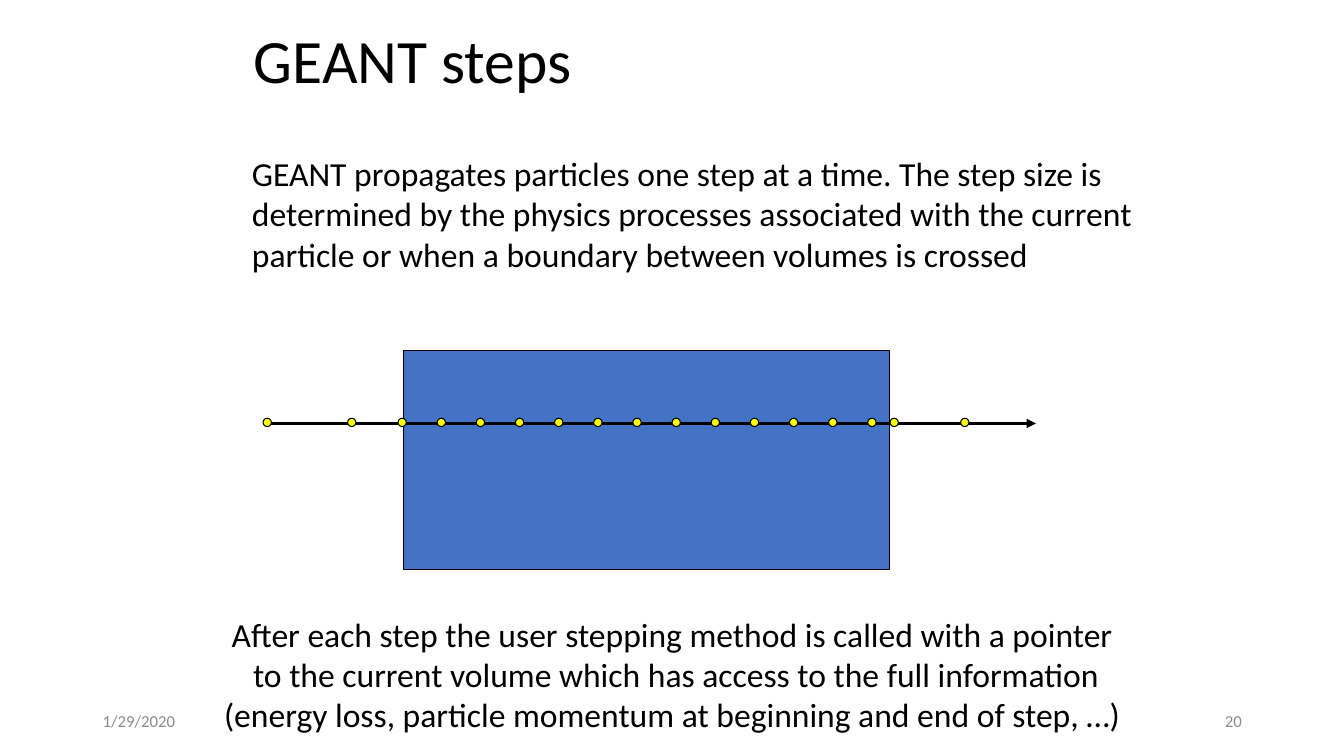
import pptx
import pptx.dml.color
import pptx.enum.shapes
import pptx.enum.text
import pptx.oxml
import pptx.util
from pptx.util import Cm

BLACK = pptx.dml.color.RGBColor(0x00, 0x00, 0x00)
GREY = pptx.dml.color.RGBColor(0x8C, 0x8C, 0x8C)
BLUE = pptx.dml.color.RGBColor(0x44, 0x72, 0xC4)
YELLOW = pptx.dml.color.RGBColor(0xFF, 0xFF, 0x00)

ALIGN = pptx.enum.text.PP_ALIGN
ANCHOR = pptx.enum.text.MSO_ANCHOR
SHAPE = pptx.enum.shapes.MSO_SHAPE

STEP_RULE = [
    "GEANT propagates particles one step at a time. The step size is",
    "determined by the physics processes associated with the current",
    "particle or when a boundary between volumes is crossed",
]
STEP_METHOD = [
    "After each step the user stepping method is called with a pointer",
    " to the current volume which has access to the full information",
    "(energy loss, particle momentum at beginning and end of step, …)",
]

TRACK_START, TRACK_END, TRACK_Y = 6.63, 26.11, 10.67
DOT_SIZE, DOT_TOP = 0.21, 10.54
FIRST_INSIDE, LAST_INSIDE, INSIDE_STEPS = 10.03, 21.87, 12


def set_values(target, values):
    for name, value in values.items():
        setattr(target, name, value)


def add_text(page, place, lines, size, color=BLACK, align=ALIGN.LEFT,
             anchor=ANCHOR.TOP, wrap=True, spacing=1.0):
    box = page.shapes.add_textbox(*map(Cm, place))
    frame = box.text_frame
    set_values(frame, {"word_wrap": wrap, "vertical_anchor": anchor})
    for index, line in enumerate(lines):
        para = frame.paragraphs[0] if index == 0 else frame.add_paragraph()
        set_values(para, {"alignment": align, "line_spacing": spacing})
        span = para.add_run()
        span.text = line
        set_values(span.font, {"name": "Calibri", "size": pptx.util.Pt(size)})
        span.font.color.rgb = color


def add_outlined(group, kind, place, fill):
    shape = group.shapes.add_shape(kind, *map(Cm, place))
    shape.shadow.inherit = False
    shape.fill.solid()
    shape.fill.fore_color.rgb = fill
    shape.line.color.rgb = BLACK
    shape.line.width = pptx.util.Pt(0.75)


def add_arrow(group, start, end):
    arrow = group.shapes.add_connector(
        pptx.enum.shapes.MSO_CONNECTOR.STRAIGHT, *map(Cm, start + end))
    arrow.line.color.rgb = BLACK
    arrow.line.width = pptx.util.Pt(2.25)
    line = arrow.line._get_or_add_ln()
    head = pptx.oxml.xmlchemy.OxmlElement("a:tailEnd")
    head.set("type", "triangle")
    line.append(head)
    line.addnext(pptx.oxml.xmlchemy.OxmlElement("a:effectLst"))


def add_track(page):
    group = page.shapes.add_group_shape()
    # Volume crossed by the particle
    add_outlined(group, SHAPE.RECTANGLE, (10.16, 8.84, 12.27, 5.51), BLUE)
    add_arrow(group, (TRACK_START, TRACK_Y), (TRACK_END, TRACK_Y))
    # Even steps inside the volume, longer ones outside
    gap = (LAST_INSIDE - FIRST_INSIDE) / INSIDE_STEPS
    inside = [FIRST_INSIDE + gap * step for step in range(INSIDE_STEPS + 1)]
    for left in [TRACK_START, 8.76, *inside, 22.43, 24.21]:
        add_outlined(group, SHAPE.OVAL,
                     (left, DOT_TOP, DOT_SIZE, DOT_SIZE), YELLOW)


def main():
    deck = pptx.Presentation()
    set_values(deck, {"slide_width": Cm(33.87), "slide_height": Cm(19.05)})
    page = deck.slides.add_slide(deck.slide_layouts[6])

    # Title and explanation
    add_text(page, (6.15, 0, 21.59, 3.18), ["GEANT steps"], 44,
             anchor=ANCHOR.MIDDLE, spacing=0.9)
    add_text(page, (6.1, 3.73, 22.91, 3.33), STEP_RULE, 24, wrap=False)

    # Particle track
    add_track(page)

    # Conclusion
    add_text(page, (5.28, 15.34, 23.32, 3.33), STEP_METHOD, 24,
             align=ALIGN.CENTER, wrap=False)

    # Date and page number
    add_text(page, (2.34, 17.65, 7.62, 1.02), ["1/29/2020"], 12, GREY,
             anchor=ANCHOR.MIDDLE)
    add_text(page, (23.93, 17.65, 7.62, 1.02), ["20"], 12, GREY,
             align=ALIGN.RIGHT, anchor=ANCHOR.MIDDLE)

    deck.save("out.pptx")


if __name__ == "__main__":
    main()
